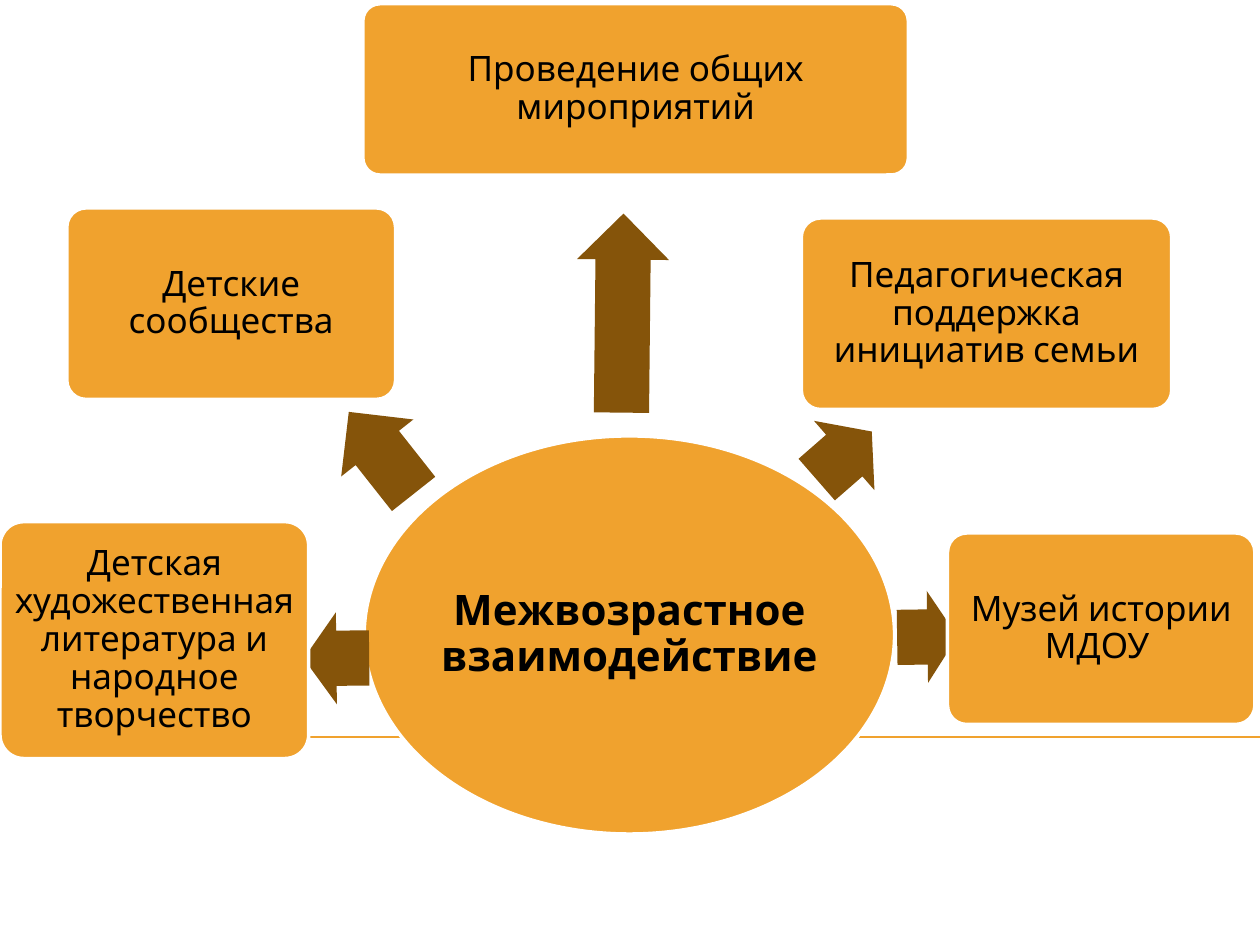
from dataclasses import dataclass

from lxml import etree
from pptx import Presentation
from pptx.dml.color import RGBColor
from pptx.enum.shapes import MSO_CONNECTOR, MSO_SHAPE
from pptx.enum.text import MSO_ANCHOR, PP_ALIGN
from pptx.oxml.ns import qn
from pptx.util import Inches, Pt

STRAIGHT = MSO_CONNECTOR.STRAIGHT
ELLIPSE = MSO_SHAPE.OVAL
ROUNDED = MSO_SHAPE.ROUNDED_RECTANGLE
LEFT_ARROW = MSO_SHAPE.LEFT_ARROW
MIDDLE = MSO_ANCHOR.MIDDLE
CENTER = PP_ALIGN.CENTER


@dataclass(frozen=True)
class Theme:
    amber: RGBColor = RGBColor(0xF0, 0xA2, 0x2E)
    brown: RGBColor = RGBColor(0x85, 0x54, 0x0A)
    white: RGBColor = RGBColor(0xFF, 0xFF, 0xFF)
    black: RGBColor = RGBColor(0, 0, 0)
    font: str = "Karla"
    hub_size: Pt = Pt(24)
    branch_size: Pt = Pt(20)
    outline: Pt = Pt(2)
    rule: Pt = Pt(0.75)


THEME = Theme()

HUB = ("Межвозрастное взаимодействие", (2.89, 3.46, 4.21, 3.16))
BRANCHES = [
    ("Детская художественная литература и народное творчество",
     (0, 4.14, 2.45, 1.88), (2.41, 4.86, 0.52, 0.73), 359.4),
    ("Детские сообщества",
     (0.53, 1.65, 2.61, 1.52), (2.61, 3.23, 0.83, 0.73), 51.7),
    ("Проведение общих мироприятий",
     (2.88, 0.03, 4.33, 1.36), (4.15, 2.12, 1.58, 0.73), 90.6),
    ("Педагогическая поддержка инициатив семьи",
     (6.36, 1.73, 2.94, 1.52), (6.41, 3.25, 0.58, 0.73), 138.9),
    ("Музей истории МДОУ ",
     (7.52, 4.23, 2.44, 1.52), (7.12, 4.69, 0.48, 0.73), 179.2),
]


def add_rule(slide, left, right, y):
    rule = slide.shapes.add_connector(
        STRAIGHT, Inches(left), Inches(y), Inches(right), Inches(y))
    rule.line.color.rgb = THEME.amber
    rule.line.width = THEME.rule
    etree.SubElement(rule._element.spPr, qn("a:effectLst"))


def add_filled(slide, preset, box, color):
    shape = slide.shapes.add_shape(preset, *map(Inches, box))
    shape.shadow.inherit = False
    shape.fill.solid()
    shape.fill.fore_color.rgb = color
    shape.line.fill.background()
    return shape


def add_node(slide, preset, box):
    node = add_filled(slide, preset, box, THEME.amber)
    node.line.color.rgb = THEME.white
    node.line.width = THEME.outline
    return node


def write_label(holder, label, size, inset, bold=False):
    frame = holder.text_frame
    frame.word_wrap = True
    frame.vertical_anchor = MIDDLE
    frame.margin_left = frame.margin_right = Inches(inset)
    frame.margin_top = frame.margin_bottom = Inches(inset)
    frame.text = label
    paragraph = frame.paragraphs[0]
    paragraph.alignment = CENTER
    paragraph.line_spacing = 0.9
    font = paragraph.runs[0].font
    font.name = THEME.font
    font.size = size
    font.bold = bold
    font.color.rgb = THEME.black


def add_hub(slide, label, box):
    add_node(slide, ELLIPSE, box)
    caption = slide.shapes.add_textbox(*map(Inches, box))
    write_label(caption, label, THEME.hub_size, 0.02, bold=True)


def add_branch(slide, label, box, arrow_box, angle):
    arrow = add_filled(slide, LEFT_ARROW, arrow_box, THEME.brown)
    arrow.adjustments[0] = 0.6
    arrow.adjustments[1] = 0.5
    arrow.rotation = angle
    node = add_node(slide, ROUNDED, box)
    node.adjustments[0] = 0.1
    write_label(node, label, THEME.branch_size, 0.04)


def main():
    deck = Presentation()
    deck.slide_width, deck.slide_height = Inches(10), Inches(7.5)
    slide = deck.slides.add_slide(deck.slide_layouts[6])
    add_rule(slide, 0.56, 10, 5.85)
    add_hub(slide, *HUB)
    for branch in BRANCHES:
        add_branch(slide, *branch)
    deck.save("out.pptx")


if __name__ == "__main__":
    main()
